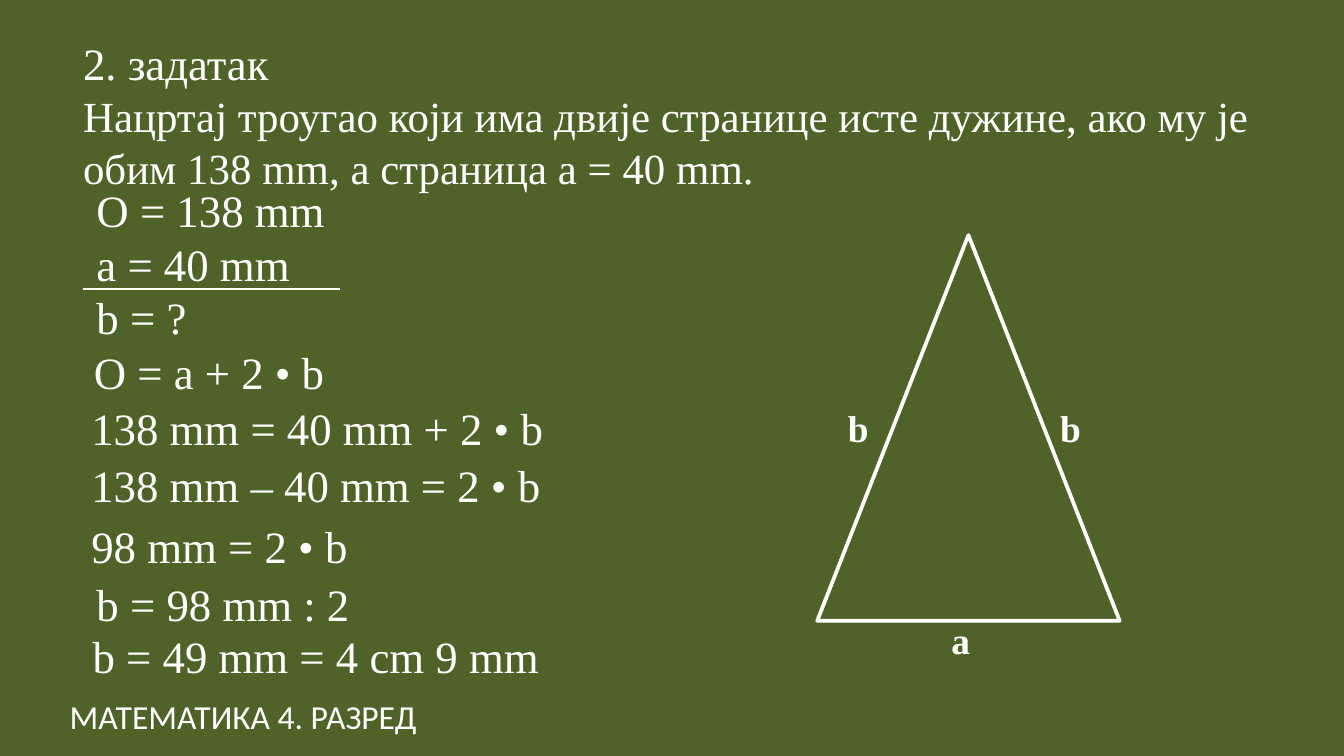
from lxml.etree import SubElement
from pptx import Presentation
from pptx.dml.color import RGBColor
from pptx.enum.shapes import MSO_CONNECTOR as CONN, MSO_SHAPE as SHAPE
from pptx.enum.text import MSO_AUTO_SIZE as AUTO
from pptx.oxml.ns import qn
from pptx.util import Pt

GREEN, WHITE = "4F6228", "FFFFFF"
SERIF, SANS = "Times New Roman", "Calibri"

TASK = ["2. задатак",
        "Нацртај троугао који има двије странице исте дужине, ако му је "
        "обим 138 mm, а страница а = 40 mm."]
GIVEN = ["O = 138 mm", "a = 40 mm", "b = ?"]
STEPS = [
    ("O = a + 2 • b", 43.2, 181.4, 168),
    ("138 mm = 40 mm + 2 • b", 41.8, 211, 276),
    ("138 mm – 40 mm = 2 • b", 41.8, 241.9, 276),
    ("98 mm = 2 • b", 41.8, 274.3, 186.5),
    ("b = 98 mm : 2", 44.6, 305.3, 276),
    ("b = 49 mm = 4 cm 9 mm", 42.5, 333.4, 276),
]
SIDES = [("b", 447.1, 213.8), ("a", 502.6, 326.9), ("b", 560.9, 213.8)]


def rgb(color):
    """Turn a hex string into a colour."""
    return RGBColor.from_string(color)


def add_text(s, lines, x, y, w, h, sizes=(24,), font=SERIF, bold=False):
    """Add a text box with one paragraph per line; the last size repeats."""
    tf = s.shapes.add_textbox(Pt(x), Pt(y), Pt(w), Pt(h)).text_frame
    tf.word_wrap = True
    tf.auto_size = AUTO.SHAPE_TO_FIT_TEXT
    tf.text = "\n".join(lines)
    for i, p in enumerate(tf.paragraphs):
        for r in p.runs:
            r.font.name = font
            r.font.size = Pt(sizes[min(i, len(sizes) - 1)])
            r.font.bold = bold
            r.font.color.rgb = rgb(WHITE)


def add_rule(s, x1, x2, y):
    """Add a thin horizontal line."""
    line = s.shapes.add_connector(CONN.STRAIGHT, Pt(x1), Pt(y), Pt(x2), Pt(y))
    line.line.color.rgb = rgb(WHITE)
    line.line.width = Pt(0.75)
    SubElement(line._element.spPr, qn("a:effectLst"))


def add_triangle(s, x, y, w, h):
    """Add an outlined isosceles triangle."""
    sp = s.shapes.add_shape(SHAPE.FLOWCHART_EXTRACT, Pt(x), Pt(y), Pt(w), Pt(h))
    sp.shadow.inherit = False
    sp.fill.background()
    sp.line.color.rgb = rgb(WHITE)
    sp.line.width = Pt(2)


def main():
    """Build the slide and save it."""
    prs = Presentation()
    prs.slide_width, prs.slide_height = Pt(720), Pt(405)
    s = prs.slides.add_slide(prs.slide_layouts[6])
    s.background.fill.solid()
    s.background.fill.fore_color.rgb = rgb(GREEN)

    add_text(s, TASK, 37.4, 15.8, 666, 92.2, sizes=(24, 23))
    add_text(s, GIVEN, 44.6, 94.3, 234, 94.3)
    add_rule(s, 44.6, 182.2, 154.8)
    for step, x, y, w in STEPS:
        add_text(s, [step], x, y, w, 36)

    add_triangle(s, 437.8, 126, 162, 206.6)
    for side, x, y in SIDES:
        add_text(s, [side], x, y, 33.1, 31.7, sizes=(20,), bold=True)
    add_text(s, ["МАТЕМАТИКА 4. РАЗРЕД"], 30.2, 369.4, 318.2, 30.2,
             sizes=(18,), font=SANS)

    prs.save("out.pptx")


if __name__ == "__main__":
    main()
